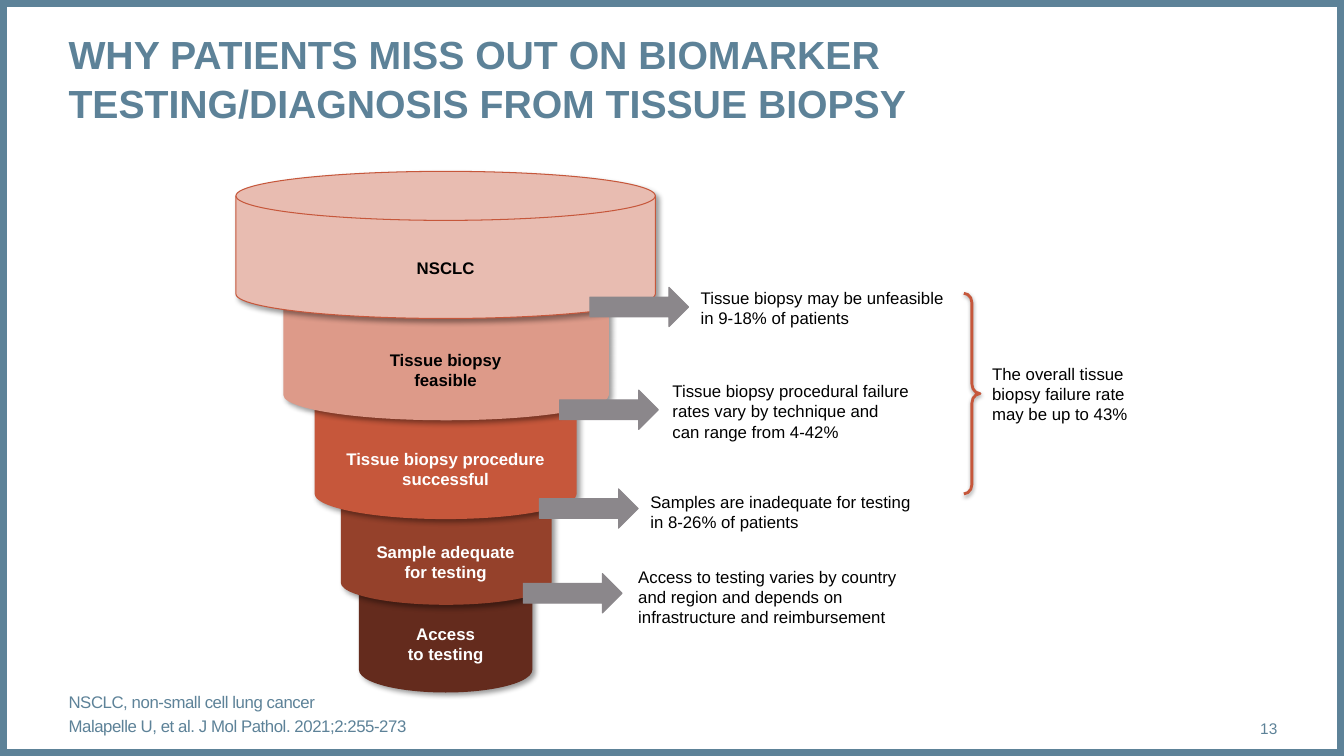
"""Build the slide on why patients miss out on biomarker testing."""
from lxml.etree import SubElement
from pptx import Presentation
from pptx.dml.color import RGBColor
from pptx.enum.shapes import MSO_SHAPE
from pptx.enum.text import MSO_ANCHOR, MSO_AUTO_SIZE, PP_ALIGN
from pptx.oxml.ns import qn
from pptx.util import Pt

PX = 9144
THEME = {
    "slate": "5D8298", "black": "000000", "white": "FFFFFF", "grey": "8B878B",
    "blush": "E8BCB1", "salmon": "DD9A89", "rust": "C6573B",
    "brick": "95412B", "maroon": "642B1D",
    "title": 28, "text": 12, "number": 11, "font": "Arial",
}


def write(box, place, paragraphs, color, size="text", bold=False,
          align=PP_ALIGN.LEFT, anchor=MSO_ANCHOR.TOP, wrap=False):
    """Place a box and fill it with evenly formatted paragraphs."""
    box.left, box.top, box.width, box.height = [n * PX for n in place]
    frame = box.text_frame
    frame.auto_size = MSO_AUTO_SIZE.NONE
    frame.word_wrap = wrap
    frame.vertical_anchor = anchor
    frame.margin_left = frame.margin_right = 0
    frame.margin_top = frame.margin_bottom = 0
    for index, text in enumerate(paragraphs):
        paragraph = frame.add_paragraph() if index else frame.paragraphs[0]
        paragraph.text = text
        paragraph.alignment = align
        paragraph.space_before = Pt(3 if index else 0)
        if box.is_placeholder:
            properties = paragraph._p.get_or_add_pPr()
            properties.set("marL", "0")
            properties.set("indent", "0")
            SubElement(properties, qn("a:buNone"))
        paragraph.font.name = THEME["font"]
        paragraph.font.size = Pt(THEME[size])
        paragraph.font.bold = bold
        paragraph.font.color.rgb = RGBColor.from_string(THEME[color])
    return frame.paragraphs


def draw(kind, place, fill=None, line=None, weight=0.75, shadow=None):
    """Add a preset shape; shadow is opacity, blur, distance and angle."""
    shape = slide.shapes.add_shape(kind, *[n * PX for n in place])
    shape.shadow.inherit = False
    if fill:
        shape.fill.solid()
        shape.fill.fore_color.rgb = RGBColor.from_string(THEME[fill])
    else:
        shape.fill.background()
    if line:
        shape.line.color.rgb = RGBColor.from_string(THEME[line])
        shape.line.width = Pt(weight)
    else:
        shape.line.fill.background()
    if shadow:
        opacity, blur, distance, angle = shadow
        effects = shape._element.spPr.find(qn("a:effectLst"))
        outer = SubElement(effects, qn("a:outerShdw"), blurRad=str(Pt(blur)),
                           dist=str(Pt(distance)), dir=str(angle * 60000),
                           algn="tl", rotWithShape="0")
        tint = SubElement(outer, qn("a:srgbClr"), val=THEME["black"])
        SubElement(tint, qn("a:alpha"), val=str(opacity * 1000))
    return shape


deck = Presentation()
deck.slide_width, deck.slide_height = 1333 * PX, 750 * PX
slide = deck.slides.add_slide(deck.slide_layouts[1])
title, footnotes = slide.placeholders

draw(MSO_SHAPE.RECTANGLE, (0, 0, 1333, 750), line="slate", weight=10)

heading = write(
    title, (68, 28, 1199, 94),
    ["WHY PATIENTS MISS OUT ON BIOMARKER TESTING/DIAGNOSIS FROM TISSUE BIOPSY"],
    "slate", "title", bold=True, wrap=True)
heading[0].line_spacing = 1.04

references = write(
    footnotes, (68, 695, 1113, 35),
    ["NSCLC, non-small cell lung cancer",
     "Malapelle U, et al. J Mol Pathol. 2021;2:255-273"],
    "slate", anchor=MSO_ANCHOR.BOTTOM, wrap=True)
for reference in references:
    for run in reference.runs:
        run._r.get_or_add_rPr().set("spc", "-30")

write(slide.shapes.add_textbox(0, 0, 0, 0), (1181, 703, 86, 40), ["13"],
      "slate", "number", align=PP_ALIGN.RIGHT, anchor=MSO_ANCHOR.MIDDLE)

FUNNEL_CENTER = 442
stages = [
    ("Access\nto testing", 552, 172, 135, "maroon", None, "white", 619, 76),
    ("Sample adequate\nfor testing", 468, 209, 132, "brick", None, "white", 537, 138),
    ("Tissue biopsy procedure\nsuccessful", 364, 260, 151, "rust", None, "white", 445, 200),
    ("Tissue biopsy\nfeasible", 266, 323, 151, "salmon", None, "black", 347, 112),
    ("NSCLC", 170, 416, 146, "blush", "rust", "black", 256, 58),
]
for label, top, width, height, fill, outline, ink, label_top, label_width in stages:
    draw(MSO_SHAPE.FLOWCHART_MAGNETIC_DISK,
         (FUNNEL_CENTER - width // 2, top, width, height),
         fill, outline, shadow=(40, 4, 3, 45))
    write(slide.shapes.add_textbox(0, 0, 0, 0),
          (FUNNEL_CENTER - label_width // 2, label_top, label_width,
           20 * len(label.split("\n"))),
          [label], ink, bold=True, align=PP_ALIGN.CENTER)

for left, top in [(585, 285), (555, 387), (535, 485), (519, 569)]:
    draw(MSO_SHAPE.RIGHT_ARROW, (left, top, 98, 39), "grey", "grey")

notes = [
    ("Tissue biopsy may be unfeasible\nin 9-18% of patients", 695, 285, 247),
    ("Tissue biopsy procedural failure\nrates vary by technique and\n"
     "can range from 4-42%", 667, 378, 236),
    ("Samples are inadequate for testing\nin 8-26% of patients", 645, 488, 260),
    ("Access to testing varies by country\nand region and depends on\n"
     "infrastructure and reimbursement", 633, 562, 259),
    ("The overall tissue\nbiopsy failure rate\nmay be up to 43%", 984, 361, 135),
]
for note, left, top, width in notes:
    write(slide.shapes.add_textbox(0, 0, 0, 0),
          (left, top, width, 20 * len(note.split("\n"))), [note], "black")

brace = draw(MSO_SHAPE.RIGHT_BRACE, (956, 291, 16, 199), line="rust", weight=2,
             shadow=(38, 3.1, 1.6, 90))
brace.adjustments[0] = 0.59

deck.save("out.pptx")
